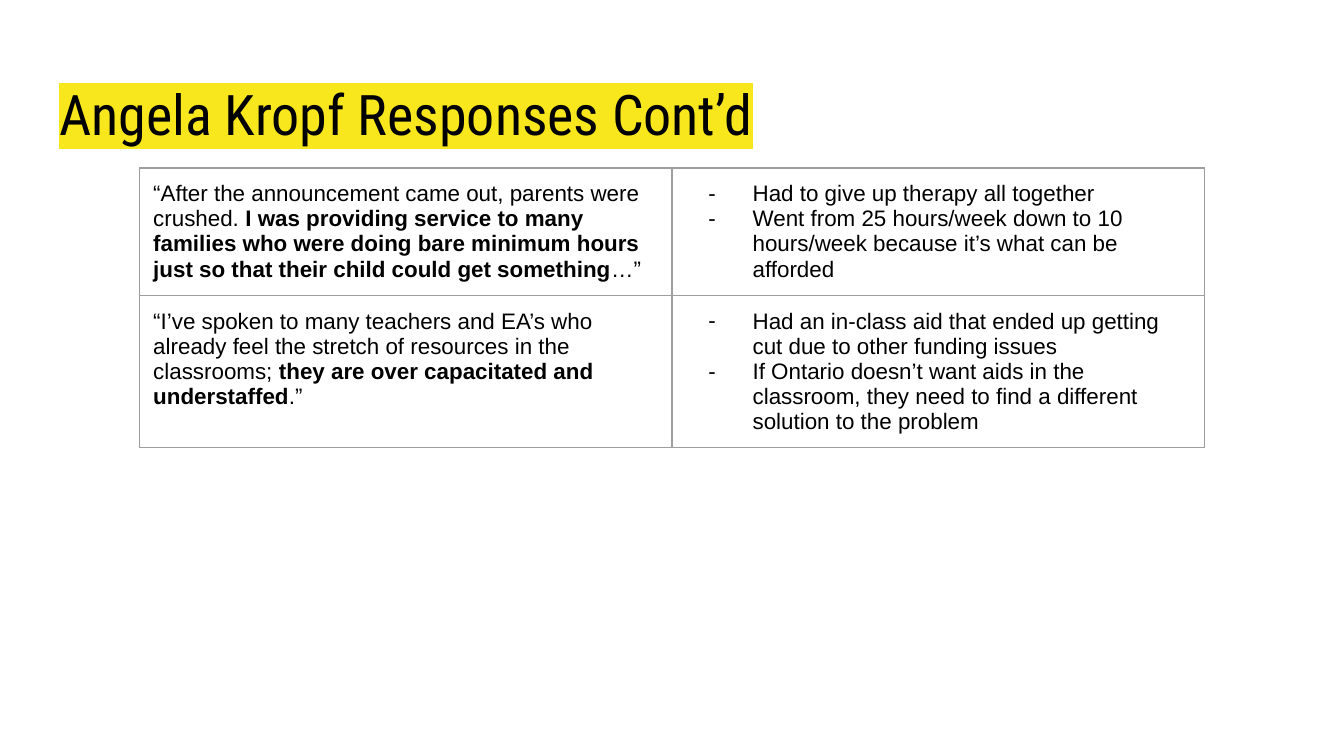
from lxml.etree import SubElement
from pptx import Presentation
from pptx.dml.color import RGBColor as Color
from pptx.enum.text import MSO_ANCHOR as Anchor, MSO_AUTO_SIZE as AutoSize, PP_ALIGN as Align
from pptx.oxml import parse_xml
from pptx.oxml.ns import nsdecls, qn
from pptx.util import Inches, Pt

theme = {
    "text": "000000",
    "highlight": "F8E71C",
    "border": "9E9E9E",
    "border_width": Pt(0.75),
    "title": {"name": "Roboto Condensed", "size": Pt(30), "bold": False},
    "body": {"name": "Arial", "size": Pt(12), "bold": False},
}

responses = [
    (
        [
            ("“After the announcement came out, parents were crushed. ", False),
            ("I was providing service to many families who were doing bare minimum hours "
             "just so that their child could get something", True),
            ("…”", False),
        ],
        [
            "Had to give up therapy all together",
            "Went from 25 hours/week down to 10 hours/week because it’s what can be afforded",
        ],
    ),
    (
        [
            ("“I’ve spoken to many teachers and EA’s who already feel the stretch of "
             "resources in the classrooms;", False),
            (" they are over capacitated and understaffed", True),
            (".”", False),
        ],
        [
            "Had an in-class aid that ended up getting cut due to other funding issues",
            "If Ontario doesn’t want aids in the classroom, they need to find a different "
            "solution to the problem",
        ],
    ),
]


def set_values(target, values):
    for name, value in values.items():
        setattr(target, name, value)


def add_run(paragraph, text, style, bold=False):
    run = paragraph.add_run()
    run.text = text
    set_values(run.font, {**theme[style], "bold": bold})
    run.font.color.rgb = Color.from_string(theme["text"])
    return run


presentation = Presentation()
set_values(presentation, {"slide_width": Inches(10), "slide_height": Inches(10) * 9 // 16})
slide = presentation.slides.add_slide(presentation.slide_layouts[5])

title = slide.shapes.title
set_values(title, {
    "left": Inches(0.34), "top": Inches(0.49),
    "width": Inches(9.32), "height": Inches(0.63),
})
set_values(title.text_frame, {
    "margin_left": Inches(0.1), "margin_right": Inches(0.1),
    "margin_top": Inches(0.1), "margin_bottom": 0,
    "vertical_anchor": Anchor.TOP, "auto_size": AutoSize.NONE, "word_wrap": True,
})
paragraph = title.text_frame.paragraphs[0]
paragraph.alignment = Align.LEFT
title_run = add_run(paragraph, "Angela Kropf Responses Cont’d", "title")
highlight = parse_xml(
    f'<a:highlight {nsdecls("a")}><a:srgbClr val="{theme["highlight"]}"/></a:highlight>'
)
title_run.font._element.find(qn("a:solidFill")).addnext(highlight)

column_width = Inches(3.96)
row_height = Inches(0.42)
table = slide.shapes.add_table(
    len(responses), 2, Inches(1.04), Inches(1.25),
    column_width * 2, row_height * len(responses)
).table
set_values(table, {"first_row": False, "horz_banding": False})

for row, (quote, points) in zip(table.rows, responses):
    quote_cell, points_cell = row.cells

    for text, bold in quote:
        add_run(quote_cell.text_frame.paragraphs[0], text, "body", bold)

    for index, point in enumerate(points):
        frame = points_cell.text_frame
        paragraph = frame.add_paragraph() if index else frame.paragraphs[0]
        add_run(paragraph, point, "body")
        properties = paragraph._p.get_or_add_pPr()
        properties.set("marL", str(Inches(0.5)))
        properties.set("indent", str(Inches(-0.33)))
        bullet_color = SubElement(properties, qn("a:buClr"))
        SubElement(bullet_color, qn("a:srgbClr"), val=theme["text"])
        SubElement(properties, qn("a:buFont"), typeface=theme["body"]["name"])
        SubElement(properties, qn("a:buChar"), char="-")

    for cell in (quote_cell, points_cell):
        for side in ("left", "right", "top", "bottom"):
            setattr(cell, f"margin_{side}", Inches(0.1))
        cell.vertical_anchor = Anchor.TOP
        cell.fill.background()
        for position, side in enumerate("LRTB"):
            border = parse_xml(
                f'<a:ln{side} {nsdecls("a")} w="{theme["border_width"]}"><a:solidFill>'
                f'<a:srgbClr val="{theme["border"]}"/></a:solidFill></a:ln{side}>'
            )
            cell._tc.get_or_add_tcPr().insert(position, border)

presentation.save("out.pptx")
